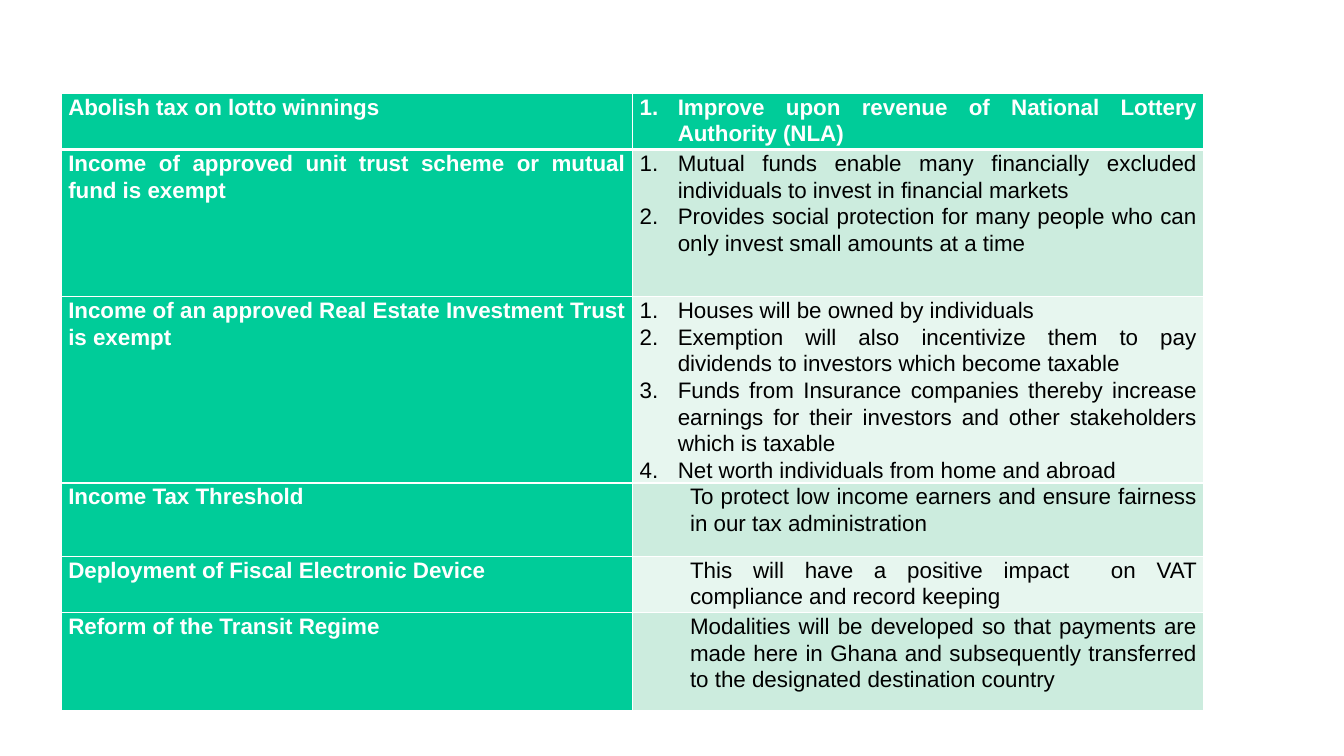
from lxml import etree
from pptx import Presentation
from pptx.dml.color import RGBColor
from pptx.enum.text import PP_ALIGN
from pptx.oxml.ns import qn
from pptx.util import Cm, Pt

JUST = PP_ALIGN.JUSTIFY
GREEN, WHITE, BLACK = "00CC99", "FFFFFF", "000000"
BANDS = ["E7F6EF", "CCECDE"]


def paint(fill, tint):
    fill.solid()
    fill.fore_color.rgb = RGBColor.from_string(tint)


def edge(cell, side, width):
    line = etree.SubElement(cell._tc.get_or_add_tcPr(), qn("a:" + side), w=str(Pt(width)))
    fill = etree.SubElement(line, qn("a:solidFill"))
    etree.SubElement(fill, qn("a:srgbClr"), val=WHITE)


rows = [
    (1.42, "Abolish tax on lotto winnings",
     ["Improve upon revenue of National Lottery Authority (NLA)"], True),
    (3.71, "Income of approved unit trust scheme or mutual fund is exempt",
     ["Mutual funds enable many financially excluded individuals to invest in financial markets",
      "Provides social protection for many people who can only invest small amounts at a time"], True),
    (4.32, "Income of an approved Real Estate Investment Trust is exempt",
     ["Houses will be owned by individuals",
      "Exemption will also incentivize them to pay dividends to investors which become taxable",
      "Funds from Insurance companies thereby increase earnings for their investors "
      "and other stakeholders which is taxable",
      "Net worth individuals from home and abroad"], True),
    (1.85, "Income Tax Threshold",
     ["To protect low income earners and ensure fairness in our tax administration"], False),
    (1.42, "Deployment of Fiscal Electronic Device",
     ["This will have a positive impact  on VAT compliance and record keeping"], False),
    (2.46, "Reform of the Transit Regime",
     ["Modalities will be developed so that payments are made here in Ghana "
      "and subsequently transferred to the designated destination country"], False),
]

deck = Presentation()
deck.slide_width, deck.slide_height = Cm(33.87), Cm(19.05)
slide = deck.slides.add_slide(deck.slide_layouts[6])
high = sum(row[0] for row in rows)
table = slide.shapes.add_table(len(rows), 2, Cm(1.54), Cm(2.35), Cm(28.8), Cm(high)).table

for r, (tall, topic, gains, listed) in enumerate(rows):
    table.rows[r].height = Cm(tall)
    for c, lines in enumerate([[topic], gains]):
        cell = table.cell(r, c)
        head = r == 0 or c == 0
        cell.margin_left = cell.margin_right = Cm(0.18)
        cell.margin_top = cell.margin_bottom = 0
        for side in ["lnL", "lnR", "lnT", "lnB"]:
            thick = (r, side) in [(0, "lnB"), (1, "lnT")]
            edge(cell, side, 3 if thick else 1)
        paint(cell.fill, GREEN if head else BANDS[r % 2])

        cell.text_frame.text = "\n".join(lines)
        for para in cell.text_frame.paragraphs:
            para.alignment = JUST
            para.line_spacing = 1.07
            if c == 1:
                props = para._p.get_or_add_pPr()
                props.set("marL", str(Cm(0.96 if listed else 1.27)))
                props.set("indent", str(Cm(-0.96 if listed else 0)))
                if listed:
                    etree.SubElement(props, qn("a:buFont"), typeface="+mj-lt")
                    etree.SubElement(props, qn("a:buAutoNum"), type="arabicPeriod")
            for run in para.runs:
                run.font.name = "Arial"
                run.font.size = Pt(16)
                run.font.bold = head
                paint(run.font.fill, WHITE if head else BLACK)

deck.save("out.pptx")
